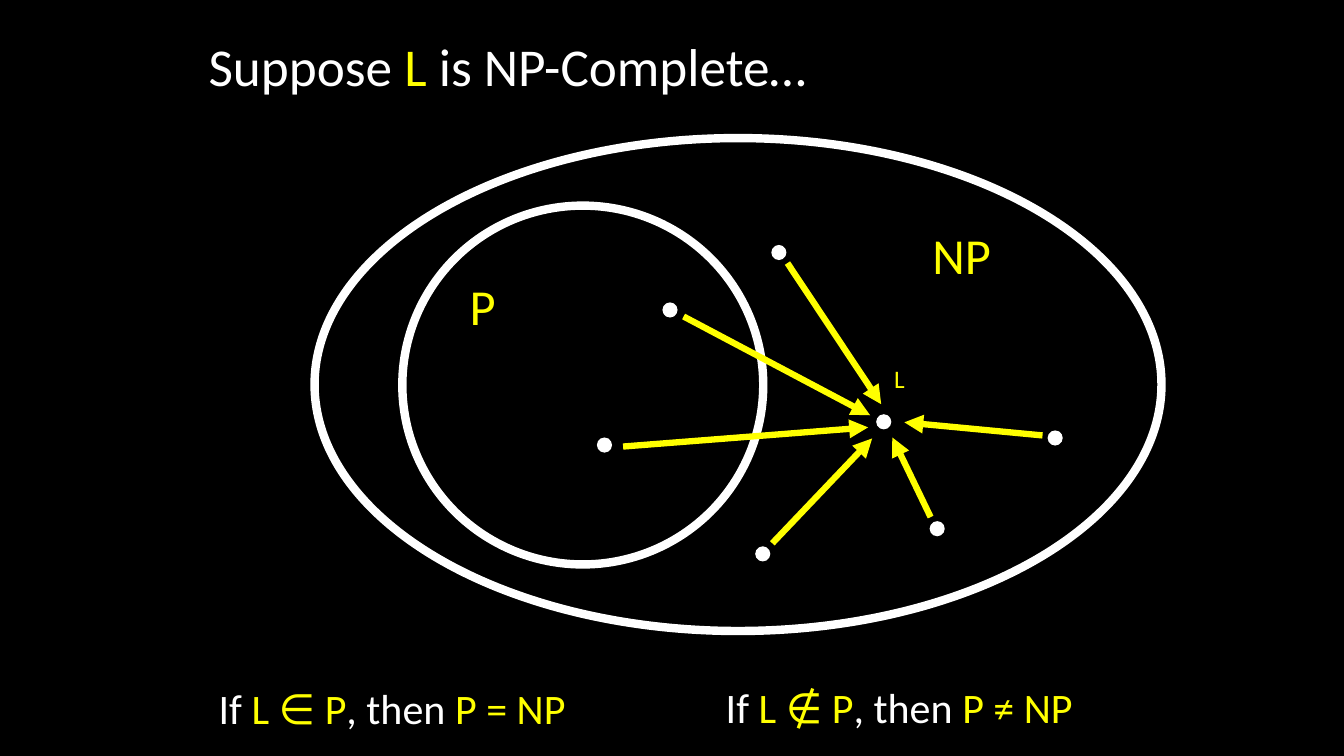
from lxml import etree
from pptx import Presentation
from pptx.dml.color import RGBColor
from pptx.enum import shapes, text
from pptx.oxml.ns import qn
from pptx.util import Inches, Pt

BLACK = RGBColor(0x00, 0x00, 0x00)
WHITE = RGBColor(0xFF, 0xFF, 0xFF)
YELLOW = RGBColor(0xFF, 0xFF, 0x00)
FONT = "Calibri"
DOT_SIZE = 0.15

# Each problem: left and top of its dot, then start and end of its reduction to L
REDUCTIONS = [
    ((6.57, 3.00), (6.78, 3.14), (8.63, 4.12)),
    ((5.92, 4.34), (6.18, 4.43), (8.61, 4.24)),
    ((7.49, 5.42), (7.66, 5.39), (8.65, 4.35)),
    ((9.22, 5.17), (9.23, 5.13), (8.85, 4.34)),
    ((10.39, 4.27), (10.34, 4.32), (8.97, 4.19)),
    ((7.65, 2.43), (7.81, 2.61), (8.74, 4.01)),
]


def add_text(slide, box, size, parts, wrap=False):
    """Add one line of text from (wording, colour) parts."""
    frame = slide.shapes.add_textbox(*map(Inches, box)).text_frame
    frame.word_wrap = wrap
    frame.auto_size = text.MSO_AUTO_SIZE.SHAPE_TO_FIT_TEXT
    for wording, colour in parts:
        run = frame.paragraphs[0].add_run()
        run.text = wording
        run.font.name = FONT
        run.font.size = Pt(size)
        run.font.color.rgb = colour


def add_ellipse(slide, box):
    ellipse = slide.shapes.add_shape(shapes.MSO_SHAPE.OVAL, *map(Inches, box))
    ellipse.shadow.inherit = False
    return ellipse


def add_class_outline(slide, box):
    outline = add_ellipse(slide, box)
    outline.fill.background()
    outline.line.color.rgb = WHITE
    outline.line.width = Pt(6)


def add_problem_dot(slide, corner):
    dot = add_ellipse(slide, (*corner, DOT_SIZE, DOT_SIZE))
    dot.fill.solid()
    dot.fill.fore_color.rgb = WHITE
    dot.line.fill.background()


def add_reduction_arrow(slide, start, end):
    arrow = slide.shapes.add_connector(
        shapes.MSO_CONNECTOR.STRAIGHT, *map(Inches, (*start, *end)))
    arrow.line.color.rgb = YELLOW
    arrow.line.width = Pt(4.5)
    properties = arrow.line._get_or_add_ln()
    etree.SubElement(properties, qn("a:tailEnd"), type="triangle")
    etree.SubElement(arrow._element.spPr, qn("a:effectLst"))


def add_conclusion(slide, left, top, premise, result):
    parts = [("If ", WHITE), (premise, YELLOW),
             (", then ", WHITE), (result, YELLOW)]
    add_text(slide, (left, top, 4.5, 0.58), 30, parts, wrap=True)


def main():
    deck = Presentation()
    deck.slide_width, deck.slide_height = Inches(13.33), Inches(7.5)
    slide = deck.slides.add_slide(deck.slide_layouts[6])
    slide.background.fill.solid()
    slide.background.fill.fore_color.rgb = BLACK

    add_text(slide, (1.97, 0.28, 6.32, 0.71), 38,
             [("Suppose ", WHITE), ("L", YELLOW), (" is NP-Complete…", WHITE)])
    add_conclusion(slide, 2.07, 6.72, "L ∈ P", "P = NP")
    add_conclusion(slide, 7.1, 6.71, "L ∉ P", "P ≠ NP")

    add_class_outline(slide, (3.12, 1.37, 8.4, 4.89))
    add_class_outline(slide, (3.99, 2.04, 3.58, 3.56))
    add_text(slide, (4.56, 2.68, 0.47, 0.68), 36, [("P", YELLOW)])
    add_text(slide, (9.15, 2.17, 0.79, 0.68), 36, [("NP", YELLOW)])
    add_text(slide, (8.77, 3.55, 0.41, 0.48), 18, [("L", YELLOW)])

    add_problem_dot(slide, (8.69, 4.11))
    for corner, start, end in REDUCTIONS:
        add_problem_dot(slide, corner)
        add_reduction_arrow(slide, start, end)

    deck.save("out.pptx")


if __name__ == "__main__":
    main()
